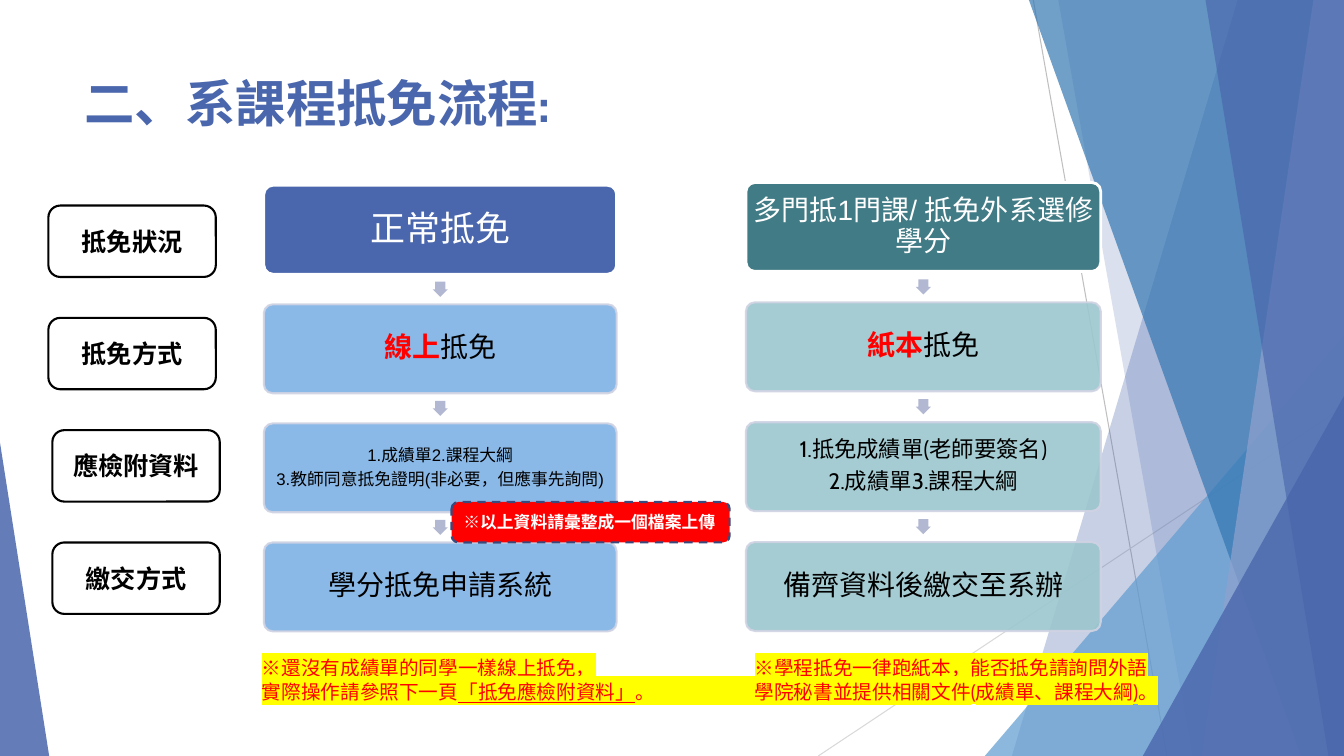
from dataclasses import dataclass
from typing import Optional

from lxml.etree import SubElement
from pptx import Presentation
from pptx.dml.color import RGBColor
from pptx.enum.dml import MSO_LINE
from pptx.enum.shapes import MSO_CONNECTOR, MSO_SHAPE
from pptx.enum.text import MSO_ANCHOR as Anchor, PP_ALIGN as Align
from pptx.oxml.ns import qn
from pptx.util import Cm, Pt

WIDTH, HEIGHT = 33.87, 19.05
WHITE = RGBColor(0xFF, 0xFF, 0xFF)
BLACK = RGBColor(0, 0, 0)
RED = RGBColor(0xFF, 0, 0)
INDIGO = RGBColor(0x4A, 0x66, 0xAC)
NAVY = RGBColor(0x37, 0x4B, 0x7F)
LAVENDER = RGBColor(0x90, 0xA2, 0xCF)
SKY = RGBColor(0x62, 0x9D, 0xD1)
OCEAN = RGBColor(0x34, 0x77, 0xB2)
PALE_BLUE = RGBColor(0x7E, 0xB2, 0xE6)
TEAL = RGBColor(0x41, 0x7B, 0x85)
PALE_TEAL = RGBColor(0x9C, 0xC7, 0xCE)
ARROW_GREY = RGBColor(0xB2, 0xB8, 0xD2)
STEP_EDGE = RGBColor(0xD0, 0xD3, 0xE3)
RAY_DARK = RGBColor(0xBF, 0xBF, 0xBF)
RAY_LIGHT = RGBColor(0xD9, 0xD9, 0xD9)
YELLOW = "FFFF00"


@dataclass(frozen=True)
class Sash:
    top_x: float
    bottom_x: float
    color: RGBColor
    opacity: int


@dataclass(frozen=True)
class Wedge:
    left: float
    top: float
    right: float
    lean: float
    color: RGBColor
    opacity: int


@dataclass(frozen=True)
class Span:
    text: str
    color: Optional[RGBColor] = None
    bold: Optional[bool] = None
    underline: Optional[bool] = None


Lines = list[list[Span]]


@dataclass(frozen=True)
class Style:
    size: float
    color: RGBColor = BLACK
    font: str = "Cabin"
    bold: bool = False
    align: Align = Align.CENTER
    anchor: Anchor = Anchor.MIDDLE
    highlight: Optional[str] = None
    line_spacing: Optional[float] = None
    after: float = 0
    inset: float = 0.25


@dataclass(frozen=True)
class Step:
    lines: Lines
    size: float
    font: str = "Cabin"
    inset: float = 0.07


@dataclass(frozen=True)
class Flow:
    left: float
    top: float
    width: float
    pitch: float
    head: RGBColor
    body: RGBColor
    steps: list[Step]


def fade(format_parent, opacity: int) -> None:
    color = format_parent.find(qn("a:solidFill"))[0]
    SubElement(color, qn("a:alpha")).set("val", str(opacity * 1000))


def paint(shape, color: RGBColor, opacity: int = 100, edge: Optional[RGBColor] = None,
          edge_width: float = 1.5) -> None:
    shape.shadow.inherit = False
    shape.fill.solid()
    shape.fill.fore_color.rgb = color
    if opacity < 100:
        fade(shape._element.spPr, opacity)
    if edge is None:
        shape.line.fill.background()
    else:
        shape.line.color.rgb = edge
        shape.line.width = Pt(edge_width)


def write(shape, lines: Lines, style: Style) -> None:
    frame = shape.text_frame
    frame.word_wrap = True
    frame.vertical_anchor = style.anchor
    frame.margin_left = frame.margin_right = Cm(style.inset)
    frame.margin_top = frame.margin_bottom = Cm(min(style.inset, 0.13))
    for i, spans in enumerate(lines):
        paragraph = frame.add_paragraph() if i else frame.paragraphs[0]
        paragraph.alignment = style.align
        paragraph.line_spacing = style.line_spacing
        paragraph.space_after = Pt(style.after)
        font = paragraph.font
        font.name, font.size, font.bold = style.font, Pt(style.size), style.bold
        font.color.rgb = style.color
        for span in spans:
            run = paragraph.add_run()
            run.text = span.text
            run.font.bold, run.font.underline = span.bold, span.underline
            if span.color is not None:
                run.font.color.rgb = span.color
            if style.highlight:
                mark = SubElement(run._r.get_or_add_rPr(), qn("a:highlight"))
                SubElement(mark, qn("a:srgbClr")).set("val", style.highlight)


def add_preset(shapes, kind: MSO_SHAPE, left: float, top: float, width: float, height: float):
    return shapes.add_shape(kind, Cm(left), Cm(top), Cm(width), Cm(height))


def add_text(shapes, left: float, top: float, width: float, height: float,
             lines: Lines, style: Style) -> None:
    write(shapes.add_textbox(Cm(left), Cm(top), Cm(width), Cm(height)), lines, style)


def add_ray(shapes, x1: float, y1: float, x2: float, y2: float, color: RGBColor) -> None:
    ray = shapes.add_connector(MSO_CONNECTOR.STRAIGHT, Cm(x1), Cm(y1), Cm(x2), Cm(y2))
    ray.line.color.rgb = color
    ray.line.width = Pt(0.75)
    SubElement(ray._element.spPr, qn("a:effectLst"))


def add_facet(shapes, facet: Sash | Wedge) -> None:
    if isinstance(facet, Sash):
        outline = shapes.build_freeform(Cm(facet.top_x), 0)
        outline.add_line_segments([(Cm(WIDTH), 0), (Cm(WIDTH), Cm(HEIGHT)),
                                   (Cm(facet.bottom_x), Cm(HEIGHT))], close=True)
        shape = outline.convert_to_shape()
    else:
        shape = add_preset(shapes, MSO_SHAPE.ISOSCELES_TRIANGLE, facet.left, facet.top,
                           facet.right - facet.left, HEIGHT - facet.top)
        shape.adjustments[0] = facet.lean
    paint(shape, facet.color, facet.opacity)


def add_flow(shapes, flow: Flow) -> None:
    box_height, arrow_size = 2.24, 0.38
    for i, step in enumerate(flow.steps):
        top = flow.top + i * flow.pitch
        box = add_preset(shapes, MSO_SHAPE.ROUNDED_RECTANGLE, flow.left, top, flow.width, box_height)
        box.adjustments[0] = 0.1
        if i == 0:
            paint(box, flow.head, edge=WHITE, edge_width=2)
        else:
            paint(box, flow.body, 90, STEP_EDGE)
            fade(box.line._ln, 90)
            arrow = add_preset(shapes, MSO_SHAPE.DOWN_ARROW, flow.left + (flow.width - arrow_size) / 2,
                               top - (flow.pitch - box_height + arrow_size) / 2, arrow_size, arrow_size)
            arrow.adjustments[0] = 0.67
            paint(arrow, ARROW_GREY)
        write(box, step.lines, Style(step.size, BLACK if i else WHITE, step.font, line_spacing=0.9,
                                     after=step.size * 0.35, inset=step.inset))


FACETS = [
    Sash(31.19, 25.5, INDIGO, 30),
    Sash(26.67, 30.05, INDIGO, 20),
    Wedge(24.82, 8.46, WIDTH, 1, SKY, 72),
    Sash(25.93, 32.79, OCEAN, 70),
    Sash(33.1, 30.28, LAVENDER, 70),
    Sash(30.38, 33.48, INDIGO, 65),
    Wedge(28.8, 9.98, WIDTH, 1, INDIGO, 80),
    Wedge(0, 11.15, 1.24, 0, INDIGO, 85),
]
FLOWS = [
    Flow(6.65, 4.67, 8.89, 3, INDIGO, PALE_BLUE, [
        Step([[Span("正常抵免")]], 25),
        Step([[Span("線上", RED, True), Span("抵免")]], 20),
        Step([[Span("1.成績單2.課程大綱")],
              [Span("3.教師同意抵免證明(非必要，但應事先詢問)")]], 12, "Arial", 0.04),
        Step([[Span("學分抵免申請系統")]], 20)]),
    Flow(18.8, 4.6, 8.94, 3.02, TEAL, PALE_TEAL, [
        Step([[Span("多門抵1門課/ 抵免外系選修學分")]], 20, "Arial"),
        Step([[Span("紙本", RED, True), Span("抵免")]], 20),
        Step([[Span("1.抵免成績單(老師要簽名)")], [Span("2.成績單3.課程大綱")]], 16, inset=0.04),
        Step([[Span("備齊資料後繳交至系辦")]], 20)]),
]
STAGES = [(1.22, "抵免狀況"), (1.22, "抵免方式"), (1.32, "應檢附資料"), (1.32, "繳交方式")]


def main() -> None:
    deck = Presentation()
    deck.slide_width, deck.slide_height = Cm(WIDTH), Cm(HEIGHT)
    shapes = deck.slides.add_slide(deck.slide_layouts[6]).shapes

    # Backdrop
    add_ray(shapes, 26.04, 0, 29.41, HEIGHT, RAY_DARK)
    add_ray(shapes, WIDTH, 10.24, 20.62, HEIGHT, RAY_LIGHT)
    for facet in FACETS:
        add_facet(shapes, facet)

    # Title and the two flows
    add_text(shapes, 1.88, 1.7, 23.88, 2.18, [[Span("二、系課程抵免流程:")]],
             Style(36, INDIGO, bold=True, align=Align.LEFT, anchor=Anchor.TOP))
    for flow in FLOWS:
        add_flow(shapes, flow)

    # Upload reminder
    reminder = add_preset(shapes, MSO_SHAPE.ROUNDED_RECTANGLE, 11.38, 12.65, 7.01, 1.02)
    paint(reminder, RED, edge=NAVY)
    reminder.line.dash_style = MSO_LINE.DASH
    write(reminder, [[Span("※以上資料請彙整成一個檔案上傳")]],
          Style(12, WHITE, "Arial", bold=True, align=Align.LEFT))

    # Stage labels
    for i, (left, stage) in enumerate(STAGES):
        label = add_preset(shapes, MSO_SHAPE.ROUNDED_RECTANGLE, left, 5.18 + i * 2.83, 4.22, 1.8)
        paint(label, WHITE, edge=BLACK)
        write(label, [[Span(stage)]], Style(18, bold=True))

    # Footnotes
    footnote = Style(14, RED, align=Align.LEFT, anchor=Anchor.TOP, highlight=YELLOW)
    add_text(shapes, 6.35, 16.4, 10.06, 1.45,
             [[Span("※還沒有成績單的同學一樣線上抵免，")],
              [Span("實際操作請參照下一頁"), Span("「抵免應檢附資料」", underline=True), Span("。")]], footnote)
    add_text(shapes, 18.77, 16.4, 10.72, 1.45,
             [[Span("※學程抵免一律跑紙本，能否抵免請詢問外語學院秘書並提供相關文件(成績單、課程大綱)。")]],
             footnote)

    deck.save("out.pptx")


if __name__ == "__main__":
    main()
